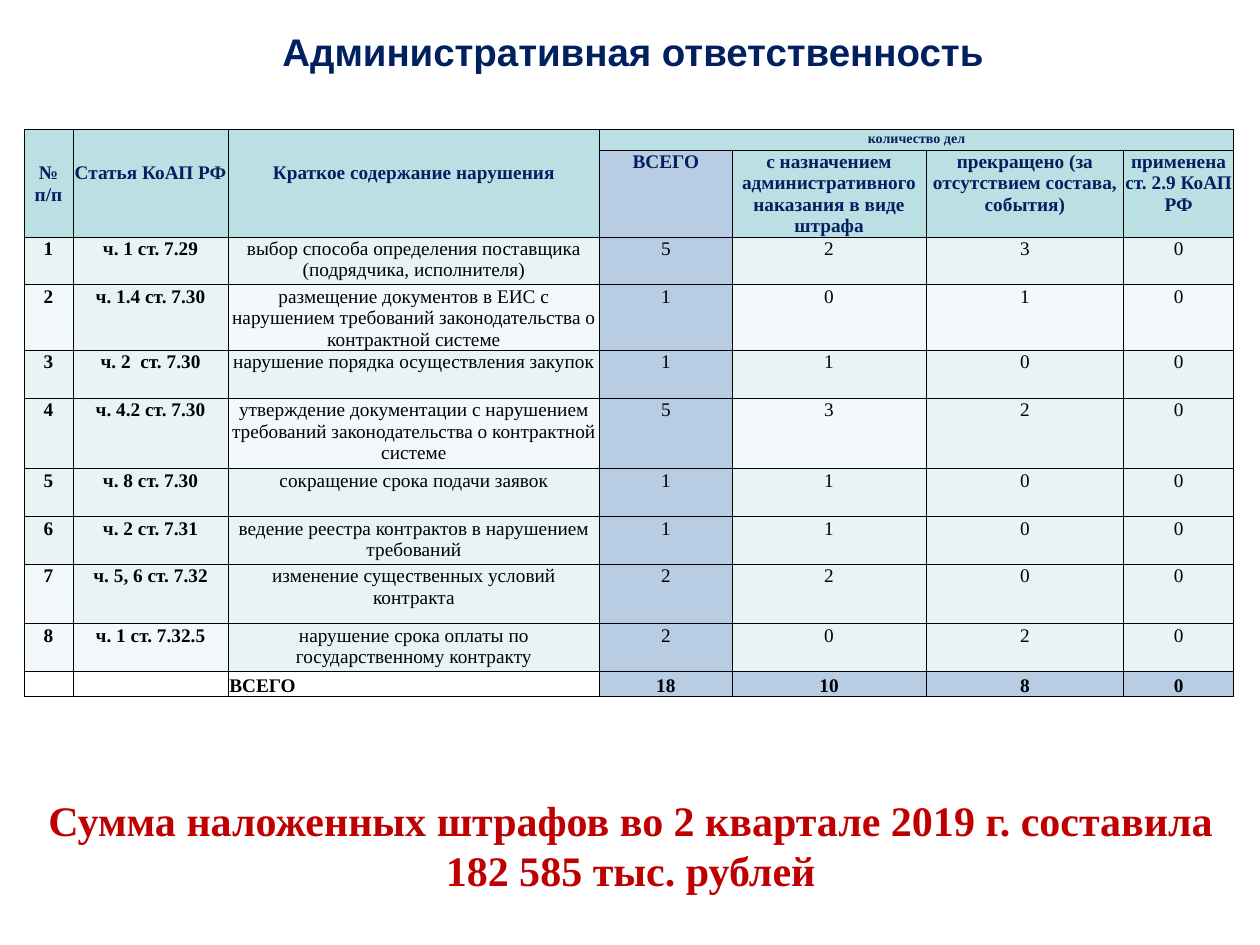
from lxml import etree
from pptx import Presentation
from pptx.dml.color import RGBColor
from pptx.enum import text as t
from pptx.oxml import ns
from pptx.util import Inches, Pt

COLORS = {
    "navy": "002060", "black": "000000", "red": "C00000",
    "header": "BBE0E3", "total": "B8CCE4", "tint": "E7F3F4", "pale": "F3F9FA",
}
SERIF = "Times New Roman"
COLUMN_WIDTHS = [0.39, 1.23, 2.95, 1.05, 1.54, 1.57, 0.87]
ROW_HEIGHTS = [0.16, 0.67, 0.38, 0.51, 0.38, 0.56, 0.38, 0.38, 0.47, 0.38, 0.15]
TOTAL_COLUMN = 3
MAIN_HEADERS = ["№ п/п", "Статья КоАП РФ", "Краткое содержание нарушения"]
CASE_HEADERS = [
    "ВСЕГО", "с назначением административного наказания в виде штрафа",
    "прекращено (за отсутствием состава, события)", "применена ст. 2.9 КоАП РФ",
]
# Article, violation, case counts, columns with the paler fill
VIOLATIONS = [
    ("ч. 1 ст. 7.29", "выбор способа определения поставщика (подрядчика, исполнителя)",
     [5, 2, 3, 0], []),
    ("ч. 1.4 ст. 7.30", "размещение документов в ЕИС с нарушением требований "
     "законодательства о контрактной системе", [1, 0, 1, 0], [0, 2, 4, 5, 6]),
    ("ч. 2  ст. 7.30", "нарушение порядка осуществления закупок", [1, 1, 0, 0], []),
    ("ч. 4.2 ст. 7.30", "утверждение документации с нарушением требований "
     "законодательства о контрактной системе", [5, 3, 2, 0], [2, 4]),
    ("ч. 8 ст. 7.30", "сокращение срока подачи заявок", [1, 1, 0, 0], []),
    ("ч. 2 ст. 7.31", "ведение реестра контрактов в нарушением требований",
     [1, 1, 0, 0], []),
    ("ч. 5, 6 ст. 7.32", "изменение существенных условий контракта", [2, 2, 0, 0], [0]),
    ("ч. 1 ст. 7.32.5", "нарушение срока оплаты по государственному контракту",
     [2, 0, 2, 0], [0, 1]),
]


def rgb(name):
    return RGBColor.from_string(COLORS[name])


def write(text_frame, content, size, color, bold=True, font=SERIF,
          align=t.PP_ALIGN.CENTER):
    text_frame.text = content
    paragraph = text_frame.paragraphs[0]
    paragraph.alignment = align
    for run in paragraph.runs:
        run.font.name = font
        run.font.size = Pt(size)
        run.font.bold = bold
        run.font.color.rgb = rgb(color)


def add_borders(cell):
    properties = cell._tc.get_or_add_tcPr()
    for side in ("a:lnL", "a:lnR", "a:lnT", "a:lnB"):
        line = etree.SubElement(properties, ns.qn(side), w=str(Pt(0.5)))
        fill = etree.SubElement(line, ns.qn("a:solidFill"))
        etree.SubElement(fill, ns.qn("a:srgbClr"), val=COLORS["black"])


def fill_cell(cell, content, fill=None, size=11, color="black", bold=True,
              anchor=t.MSO_ANCHOR.TOP, align=t.PP_ALIGN.CENTER):
    write(cell.text_frame, content, size, color, bold, align=align)
    cell.vertical_anchor = anchor
    if fill:
        cell.fill.solid()
        cell.fill.fore_color.rgb = rgb(fill)
    else:
        cell.fill.background()
    if not content:
        # Keeps an empty cell from stretching its row
        etree.SubElement(cell.text_frame.paragraphs[0]._p, ns.qn("a:endParaRPr"),
                         sz=str(size * 100))


def add_title(slide, left, top, width, height):
    title = slide.shapes.title
    title.left, title.top, title.width, title.height = left, top, width, height
    write(title.text_frame, "Административная ответственность", 22, "navy", font="Arial")
    title.text_frame.vertical_anchor = t.MSO_ANCHOR.MIDDLE
    title.text_frame.auto_size = t.MSO_AUTO_SIZE.NONE


def fill_header(table):
    for column, label in enumerate(MAIN_HEADERS):
        cell = table.cell(0, column)
        cell.merge(table.cell(1, column))
        fill_cell(cell, label, "header", color="navy", anchor=t.MSO_ANCHOR.MIDDLE)
        if column:
            cell.margin_bottom = Inches(0.17)
    cases = table.cell(0, TOTAL_COLUMN)
    cases.merge(table.cell(0, len(COLUMN_WIDTHS) - 1))
    fill_cell(cases, "количество дел", "header", size=8, color="navy")
    for column, label in enumerate(CASE_HEADERS, TOTAL_COLUMN):
        fill = "total" if column == TOTAL_COLUMN else "header"
        fill_cell(table.cell(1, column), label, fill, color="navy")


def fill_violations(table):
    for number, (article, violation, counts, pale) in enumerate(VIOLATIONS, 1):
        for column, value in enumerate([number, article, violation, *counts]):
            if column == TOTAL_COLUMN:
                fill = "total"
            else:
                fill = "pale" if column in pale else "tint"
            fill_cell(table.cell(number + 1, column), str(value), fill, bold=column < 2)


def fill_totals(table):
    row = len(ROW_HEIGHTS) - 1
    sums = [sum(counts) for counts in zip(*(entry[2] for entry in VIOLATIONS))]
    for column, value in enumerate(["", "", "ВСЕГО", *sums]):
        is_sum = column >= TOTAL_COLUMN
        fill_cell(table.cell(row, column), str(value), "total" if is_sum else None,
                  anchor=t.MSO_ANCHOR.BOTTOM,
                  align=t.PP_ALIGN.CENTER if is_sum else t.PP_ALIGN.LEFT)


def add_case_table(slide, left, top, width, height):
    table = slide.shapes.add_table(len(ROW_HEIGHTS), len(COLUMN_WIDTHS),
                                   left, top, width, height).table
    table.first_row = table.horz_banding = False
    for column, column_width in zip(table.columns, COLUMN_WIDTHS):
        column.width = Inches(column_width)
    for row, row_height in zip(table.rows, ROW_HEIGHTS):
        row.height = Inches(row_height)
    for cell in table.iter_cells():
        cell.margin_left = cell.margin_right = cell.margin_top = Inches(0.01)
        cell.margin_bottom = 0
        add_borders(cell)
    fill_header(table)
    fill_violations(table)
    fill_totals(table)


def add_summary(slide, left, top, width, height):
    text_frame = slide.shapes.add_textbox(left, top, width, height).text_frame
    text_frame.word_wrap = True
    text_frame.auto_size = t.MSO_AUTO_SIZE.SHAPE_TO_FIT_TEXT
    text_frame.vertical_anchor = t.MSO_ANCHOR.MIDDLE
    write(text_frame, "Сумма наложенных штрафов во 2 квартале 2019 г. "
          "составила 182 585 тыс. рублей", 24, "red")


def main():
    presentation = Presentation()
    presentation.slide_width, presentation.slide_height = Inches(10), Inches(7.5)
    slide = presentation.slides.add_slide(presentation.slide_layouts[5])
    add_title(slide, Inches(0.26), Inches(0), Inches(9.53), Inches(0.81))
    add_case_table(slide, Inches(0.19), Inches(1.03), Inches(9.6), Inches(4.42))
    add_summary(slide, Inches(0.22), Inches(6.25), Inches(9.57), Inches(0.91))
    presentation.save("out.pptx")


if __name__ == "__main__":
    main()
